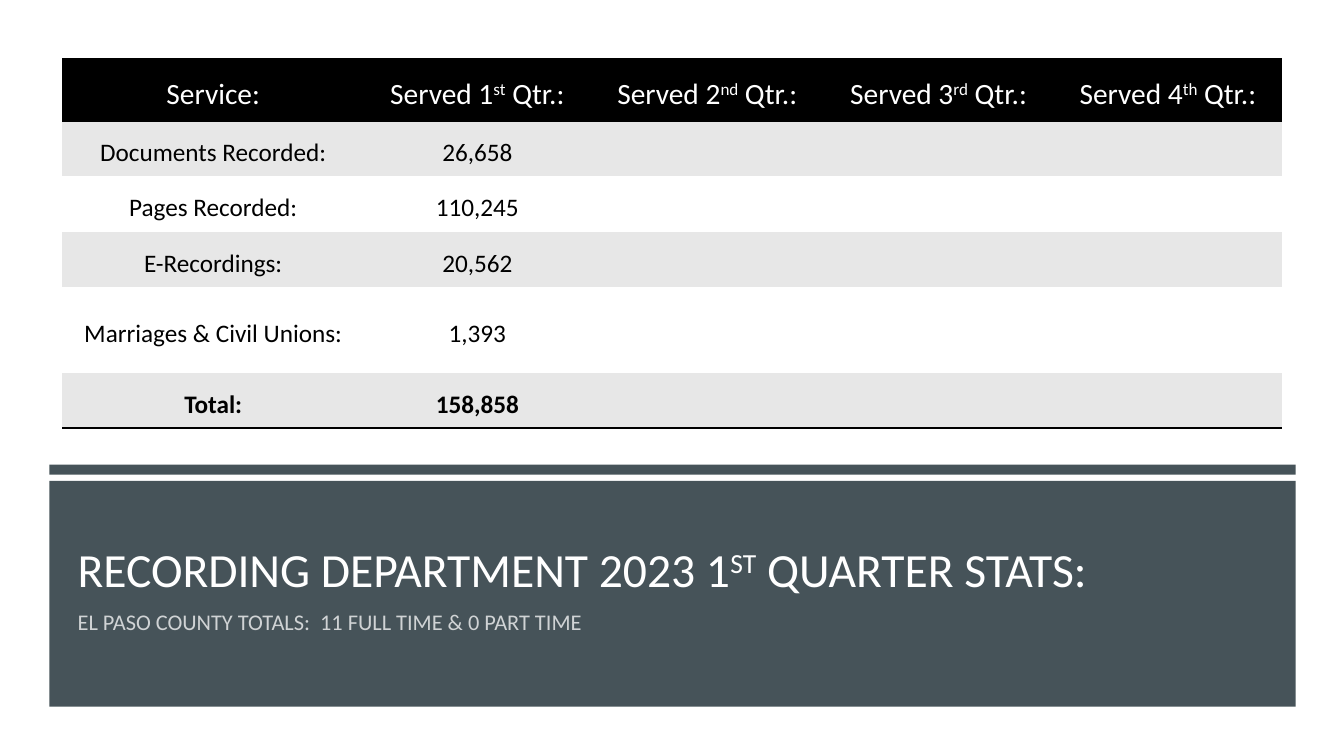
"""Build the quarterly statistics slide of a recording department."""
from dataclasses import dataclass

from lxml.etree import SubElement
from pptx import Presentation
from pptx.dml.color import RGBColor
from pptx.enum.shapes import MSO_SHAPE
from pptx.enum.text import MSO_ANCHOR, MSO_AUTO_SIZE, PP_ALIGN
from pptx.oxml.ns import qn
from pptx.slide import Slide
from pptx.table import _Cell as Cell
from pptx.text.text import _Paragraph as Paragraph
from pptx.util import Inches, Length, Pt

COLORS = {"band": "465359", "header": "000000", "stripe": "E7E7E7",
          "light": "FFFFFF", "dark": "000000"}
FONT = "Calibri"
WIDTH, HEIGHT = Inches(13.33), Inches(7.5)
NO_GRID_STYLE = "{2D5ABB26-0587-4C30-8999-92F81FD0307C}"
COLUMN_SHARES = (22.43, 16.88, 17.33, 17.1, 17.03)
ROW_SHARES = (8.13, 7.33, 7.33, 7.33, 11.33, 7.33)
HEADINGS = ("Service:", "Served 1^st^ Qtr.:", "Served 2^nd^ Qtr.:",
            "Served 3^rd^ Qtr.:", "Served 4^th^ Qtr.:")
SERVICES = (("Documents Recorded:", "26,658"), ("Pages Recorded:", "110,245"),
            ("E-Recordings:", "20,562"), ("Marriages & Civil Unions:", "1,393"),
            ("Total:", "158,858"))


@dataclass(frozen=True)
class Box:
    """Position and size in percent of the slide."""
    left: float
    top: float
    width: float
    height: float

    def lengths(self) -> tuple[Length, Length, Length, Length]:
        """Return left, top, width and height as lengths."""
        return (across(self.left), down(self.top),
                across(self.width), down(self.height))


@dataclass(frozen=True)
class TextStyle:
    """Look of a piece of text."""
    size: float
    color: str
    bold: bool = False
    opacity: int = 100


@dataclass(frozen=True)
class Caption:
    """Text shown in a placeholder."""
    index: int
    text: str
    box: Box
    style: TextStyle
    anchor: MSO_ANCHOR


BANDS = (Box(3.68, 61.47, 92.72, 1.33), Box(3.68, 63.6, 92.72, 29.87))
TABLE_BOX = Box(4.65, 7.87, sum(COLUMN_SHARES), sum(ROW_SHARES))
CAPTIONS = (
    Caption(0, "RECORDING DEPARTMENT 2023 1^ST^ QUARTER STATS:",
            Box(5.03, 66.67, 89.95, 13.07), TextStyle(34, "light"), MSO_ANCHOR.BOTTOM),
    Caption(1, "EL PASO COUNTY TOTALS:  11 FULL TIME & 0 PART TIME",
            Box(5.03, 79.73, 89.95, 7.07), TextStyle(16, "light", opacity=75),
            MSO_ANCHOR.TOP),
)


def across(share: float) -> Length:
    """Turn a percentage of the slide width into a length."""
    return Length(round(WIDTH * share / 100))


def down(share: float) -> Length:
    """Turn a percentage of the slide height into a length."""
    return Length(round(HEIGHT * share / 100))


def rgb(name: str) -> RGBColor:
    """Look up a named colour."""
    return RGBColor.from_string(COLORS[name])


def write(paragraph: Paragraph, text: str, style: TextStyle) -> None:
    """Add text run by run, raising the parts between carets."""
    for position, part in enumerate(text.split("^")):
        run = paragraph.add_run()
        run.text = part
        font = run.font
        font.name, font.size, font.bold = FONT, Pt(style.size), style.bold
        font.color.rgb = rgb(style.color)
        properties = run._r.get_or_add_rPr()
        if position % 2:
            properties.set("baseline", "30000")
        if style.opacity < 100:
            color = properties.find(".//" + qn("a:srgbClr"))
            SubElement(color, qn("a:alpha"), val=str(style.opacity * 1000))


def add_band(slide: Slide, box: Box) -> None:
    """Draw a plain coloured band."""
    shape = slide.shapes.add_shape(MSO_SHAPE.RECTANGLE, *box.lengths())
    shape.shadow.inherit = False
    shape.fill.solid()
    shape.fill.fore_color.rgb = rgb("band")
    shape.line.fill.background()


def fill_caption(slide: Slide, caption: Caption) -> None:
    """Place and fill a placeholder in front of the bands."""
    shape = slide.placeholders[caption.index]
    shape.left, shape.top, shape.width, shape.height = caption.box.lengths()
    frame = shape.text_frame
    frame.word_wrap = True
    frame.auto_size = MSO_AUTO_SIZE.NONE
    frame.vertical_anchor = caption.anchor
    paragraph = frame.paragraphs[0]
    paragraph.alignment = PP_ALIGN.LEFT
    if caption.index == 0:
        paragraph.line_spacing = 0.9
    else:
        paragraph.space_after = Pt(6)
    write(paragraph, caption.text, caption.style)
    slide.shapes._spTree.append(shape._element)


def add_border(cell: Cell, side: str) -> None:
    """Draw a two-point rule on one side of a cell."""
    line = SubElement(cell._tc.get_or_add_tcPr(), qn(f"a:ln{side}"), w=str(Pt(2)))
    fill = SubElement(line, qn("a:solidFill"))
    SubElement(fill, qn("a:srgbClr"), val=COLORS["dark"])


def format_cell(cell: Cell, text: str, style: TextStyle, fill: str, sides: str) -> None:
    """Fill one table cell and set its look."""
    cell.margin_left = cell.margin_right = cell.margin_top = Inches(0.15)
    cell.margin_bottom = Inches(0.07)
    cell.vertical_anchor = MSO_ANCHOR.MIDDLE
    for side in sides:
        add_border(cell, side)
    cell.fill.solid()
    cell.fill.fore_color.rgb = rgb(fill)
    paragraph = cell.text_frame.paragraphs[0]
    paragraph.alignment = PP_ALIGN.CENTER
    if text:
        write(paragraph, text, style)


def add_statistics(slide: Slide) -> None:
    """Add the table of services by quarter."""
    rows = (HEADINGS, *SERVICES)
    last = len(rows) - 1
    frame = slide.shapes.add_table(len(rows), len(HEADINGS), *TABLE_BOX.lengths())
    table = frame.table
    table.first_row = table.horz_banding = False
    table._tbl.tblPr.find(qn("a:tableStyleId")).text = NO_GRID_STYLE
    for column, share in zip(table.columns, COLUMN_SHARES):
        column.width = across(share)
    for number, (row, share, texts) in enumerate(zip(table.rows, ROW_SHARES, rows)):
        row.height = down(share)
        if number == 0:
            style, fill, sides = TextStyle(21, "light"), "header", "TB"
        else:
            style = TextStyle(18, "dark", bold=number == last)
            fill = "stripe" if number % 2 else "light"
            sides = "B" if number == last else ""
        for position, cell in enumerate(row.cells):
            text = texts[position] if position < len(texts) else ""
            format_cell(cell, text, style, fill, sides)


def main() -> None:
    """Build and save the presentation."""
    presentation = Presentation()
    presentation.slide_width, presentation.slide_height = WIDTH, HEIGHT
    slide = presentation.slides.add_slide(presentation.slide_layouts[2])
    slide.background.fill.solid()
    slide.background.fill.fore_color.rgb = rgb("light")
    for band in BANDS:
        add_band(slide, band)
    for caption in CAPTIONS:
        fill_caption(slide, caption)
    add_statistics(slide)
    presentation.save("out.pptx")


if __name__ == "__main__":
    main()
